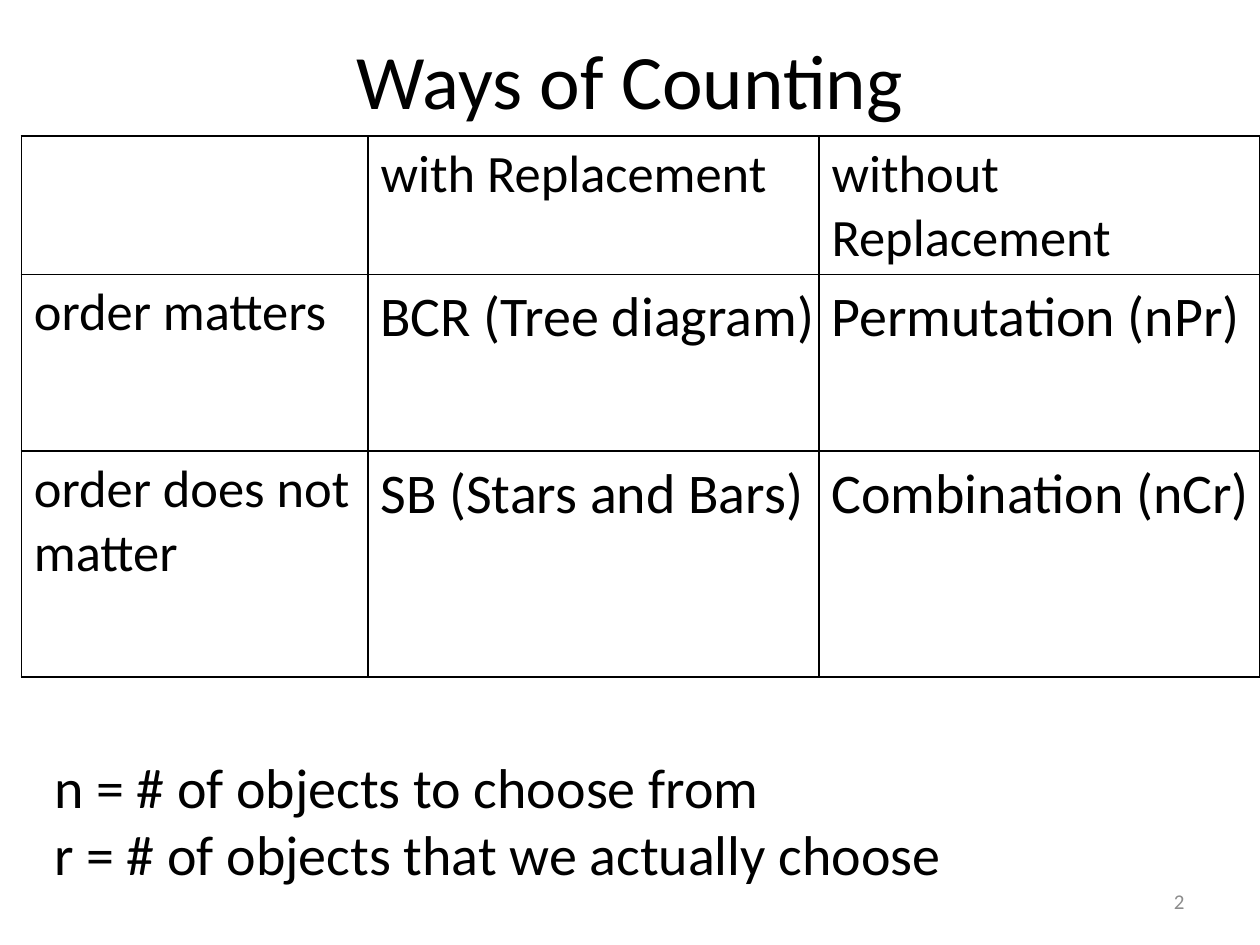
import pptx
import pptx.util
import pptx.dml.color
import pptx.enum.text
import pptx.oxml
import pptx.oxml.ns

Cm, Pt = pptx.util.Cm, pptx.util.Pt
ALIGN, ANCHOR = pptx.enum.text.PP_ALIGN, pptx.enum.text.MSO_ANCHOR

# Content
TITLE = "Ways of Counting"
TABLE = [
    ["", "with Replacement", "without Replacement"],
    ["order matters", "", ""],
    ["order does not matter", "", ""],
]
# Methods laid over the table: (row, column, text, width in cm)
METHODS = [
    (1, 1, "BCR (Tree diagram)", 9.35),
    (1, 2, "Permutation (nPr)", 8.84),
    (2, 1, "SB (Stars and Bars)", 9.12),
    (2, 2, "Combination (nCr)", 9.04),
]
LEGEND = ["n = # of objects to choose from",
          "r = # of objects that we actually choose"]
PAGE = "2"

# Layout in cm
LEFT, TOP = 0.43, 2.74
COLS = [6.99, 9.09, 8.89]
ROWS = [2.62, 3.56, 4.55]
METHOD_DROP, METHOD_HEIGHT = 0.17, 1.62

THEME = {
    "font": "Calibri", "ink": "000000", "muted": "8C8C8C", "border": "000000",
    "title": 44, "cell": 30, "body": 32, "page": 12, "border_pt": 1,
}


def write(tf, lines, size, color="ink", align=ALIGN.LEFT):
    for i, line in enumerate(lines):
        p = tf.paragraphs[0] if i == 0 else tf.add_paragraph()
        p.alignment = align
        r = p.add_run()
        r.text = line
        font = {"name": THEME["font"], "size": Pt(THEME[size])}
        for key, value in font.items():
            setattr(r.font, key, value)
        r.font.color.rgb = pptx.dml.color.RGBColor.from_string(THEME[color])


def add_text(slide, box, lines, size, color="ink", align=ALIGN.LEFT, **frame):
    sp = slide.shapes.add_textbox(*(Cm(v) for v in box))
    tf = sp.text_frame
    for key, value in ({"word_wrap": True} | frame).items():
        setattr(tf, key, value)
    write(tf, lines, size, color, align)


def add_borders(cell):
    tc_pr = cell._tc.get_or_add_tcPr()
    for i, side in enumerate(("lnL", "lnR", "lnT", "lnB")):
        tc_pr.insert(i, pptx.oxml.parse_xml(
            f'<a:{side} {pptx.oxml.ns.nsdecls("a")} w="{Pt(THEME["border_pt"])}">'
            f'<a:solidFill><a:srgbClr val="{THEME["border"]}"/></a:solidFill>'
            f'</a:{side}>'))


def add_grid(slide):
    table = slide.shapes.add_table(
        len(ROWS), len(COLS), Cm(LEFT), Cm(TOP), Cm(sum(COLS)), Cm(sum(ROWS))).table
    table.first_row = table.horz_banding = False
    for col, width in zip(table.columns, COLS):
        col.width = Cm(width)
    for row, height, texts in zip(table.rows, ROWS, TABLE):
        row.height = Cm(height)
        for cell, text in zip(row.cells, texts):
            cell.fill.background()
            add_borders(cell)
            if text:
                write(cell.text_frame, [text], "cell")


def main():
    prs = pptx.Presentation()
    prs.slide_width, prs.slide_height = Cm(25.4), Cm(19.05)
    slide = prs.slides.add_slide(prs.slide_layouts[6])

    # Title and table
    add_text(slide, (1.27, 0, 22.86, 3.18), [TITLE], "title",
             align=ALIGN.CENTER, vertical_anchor=ANCHOR.MIDDLE)
    add_grid(slide)

    # Legend
    fit = {"word_wrap": False,
           "auto_size": pptx.enum.text.MSO_AUTO_SIZE.SHAPE_TO_FIT_TEXT}
    add_text(slide, (0.84, 15.04, 18.8, 3), LEGEND, "body", **fit)

    # Counting methods, each at the top left of its cell
    for row, col, text, width in METHODS:
        x = LEFT + sum(COLS[:col])
        y = TOP + sum(ROWS[:row]) + METHOD_DROP
        add_text(slide, (x, y, width, METHOD_HEIGHT), [text], "body", **fit)

    # Page number
    add_text(slide, (18.21, 17.65, 5.92, 1.02), [PAGE], "page", "muted",
             ALIGN.RIGHT, vertical_anchor=ANCHOR.MIDDLE)

    prs.save("out.pptx")


if __name__ == "__main__":
    main()
